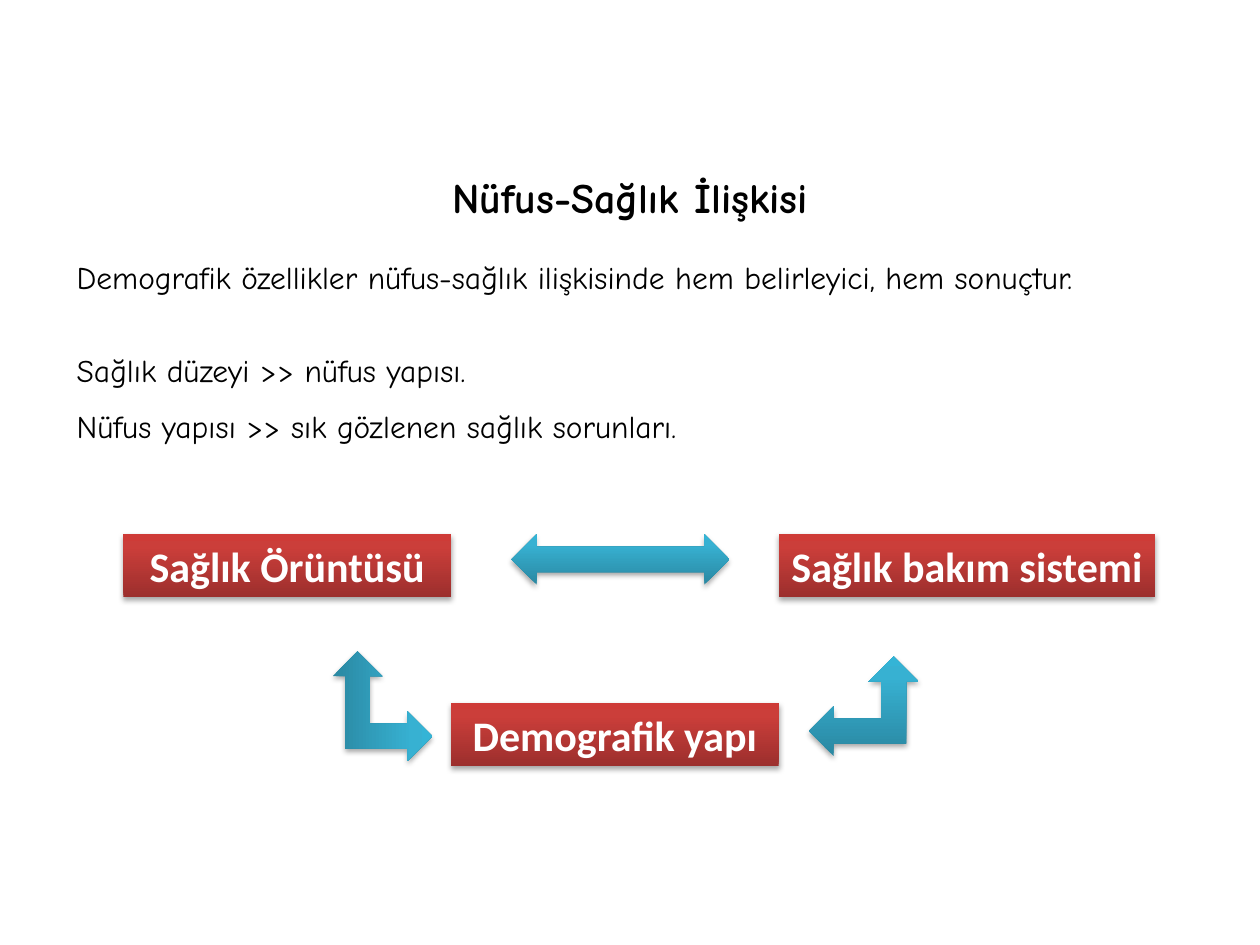
import pptx
import pptx.dml.color
import pptx.enum.shapes
import pptx.enum.text
import pptx.oxml
import pptx.oxml.ns
import pptx.util

SHAPES = pptx.enum.shapes.MSO_SHAPE
ALIGN = pptx.enum.text.PP_ALIGN
COLUMN = ROW = pptx.util.Inches(0.1)  # the slide is 100 columns by 75 rows

RED = ((0, "9C2F2D"), (80, "CB3E3A"), (100, "CE3B37"))
TEAL = ((0, "2A88A2"), (80, "37B1D2"), (100, "34B4D6"))

TITLE = {"size": 24, "name": "Comic Neue", "bold": True, "color": "000000"}
BODY = {"size": 18, "name": "Comic Neue", "bold": False, "color": "000000"}
LABEL = {"size": 24, "name": "Calibri", "bold": True, "color": "FFFFFF"}

BOX_HEIGHT = 5.0
TOP_ROW, BOTTOM_ROW = 42.4, 55.8
LINE_GAP = 20.7  # one body line, in points


def rgb(value):
    return pptx.dml.color.RGBColor.from_string(value)


def grid(left, top, width, height):
    """Turn columns and rows into slide lengths."""
    return (int(left * COLUMN), int(top * ROW), int(width * COLUMN), int(height * ROW))


def set_font(font, style):
    for name, value in style.items():
        if name == "color":
            font.color.rgb = rgb(value)
        else:
            setattr(font, name, pptx.util.Pt(value) if name == "size" else value)


def write(paragraph, text, style, **layout):
    run = paragraph.add_run()
    run.text = text
    set_font(run.font, style)
    for name, value in layout.items():
        setattr(paragraph, name, value)


def set_gradient(shape, stops):
    """Fill from bottom to top with any number of stops."""
    shape.fill.gradient()
    shape.fill.gradient_angle = 90
    stop_list = shape.fill._fill._gradFill.find(pptx.oxml.ns.qn("a:gsLst"))
    for stop in list(stop_list):
        stop_list.remove(stop)
    for position, color in stops:
        stop_list.append(pptx.oxml.parse_xml(
            f'<a:gs {pptx.oxml.ns.nsdecls("a")} pos="{position * 1000}">'
            f'<a:srgbClr val="{color}"/></a:gs>'))


def set_shadow(shape):
    shape.shadow.inherit = False
    effects = shape._element.spPr.find(pptx.oxml.ns.qn("a:effectLst"))
    effects.append(pptx.oxml.parse_xml(
        f'<a:outerShdw {pptx.oxml.ns.nsdecls("a")} blurRad="40000" dist="23000" '
        'dir="5400000" rotWithShape="0"><a:srgbClr val="000000">'
        '<a:alpha val="35000"/></a:srgbClr></a:outerShdw>'))


def add_glossy_shape(slide, kind, place, stops, rotation=0):
    shape = slide.shapes.add_shape(kind, *grid(*place))
    shape.rotation = rotation
    set_gradient(shape, stops)
    shape.line.fill.background()
    set_shadow(shape)
    return shape


def add_box(slide, text, left, top, width):
    box = add_glossy_shape(slide, SHAPES.RECTANGLE, (left, top, width, BOX_HEIGHT), RED)
    frame = box.text_frame
    frame.margin_left = frame.margin_right = int(COLUMN / 2)
    write(frame.paragraphs[0], text, LABEL, alignment=ALIGN.CENTER)


def add_text(slide, place, lines):
    frame = slide.shapes.add_textbox(*grid(*place)).text_frame
    frame.word_wrap = True
    for index, (text, style, layout) in enumerate(lines):
        paragraph = frame.add_paragraph() if index else frame.paragraphs[0]
        write(paragraph, text, style, **layout)


def main():
    presentation = pptx.Presentation()
    presentation.slide_width, presentation.slide_height = 100 * COLUMN, 75 * ROW
    slide = presentation.slides.add_slide(presentation.slide_layouts[6])

    gap = {"space_after": pptx.util.Pt(LINE_GAP)}
    add_text(slide, (5.1, 13.1, 89.8, 23.2), [
        ("Nüfus-Sağlık İlişkisi", TITLE, {"alignment": ALIGN.CENTER, **gap}),
        ("Demografik özellikler nüfus-sağlık ilişkisinde hem belirleyici, hem sonuçtur.",
         BODY, gap),
        ("Sağlık düzeyi >> nüfus yapısı.", BODY, {"line_spacing": 1.5}),
        ("Nüfus yapısı >> sık gözlenen sağlık sorunları.", BODY, {"line_spacing": 1.5}),
    ])

    add_box(slide, "Sağlık Örüntüsü", 9.8, TOP_ROW, 26)
    add_box(slide, "Sağlık bakım sistemi", 61.8, TOP_ROW, 29.9)
    add_box(slide, "Demografik yapı", 35.8, BOTTOM_ROW, 26)

    add_glossy_shape(slide, SHAPES.LEFT_RIGHT_ARROW, (40.6, TOP_ROW, 17.3, 4), TEAL)
    for left, rotation in ((64.2, 0), (26, 90)):
        add_glossy_shape(slide, SHAPES.LEFT_UP_ARROW, (left, 52.1, 8.7, 7.9), TEAL, rotation)

    presentation.save("out.pptx")


if __name__ == "__main__":
    main()
